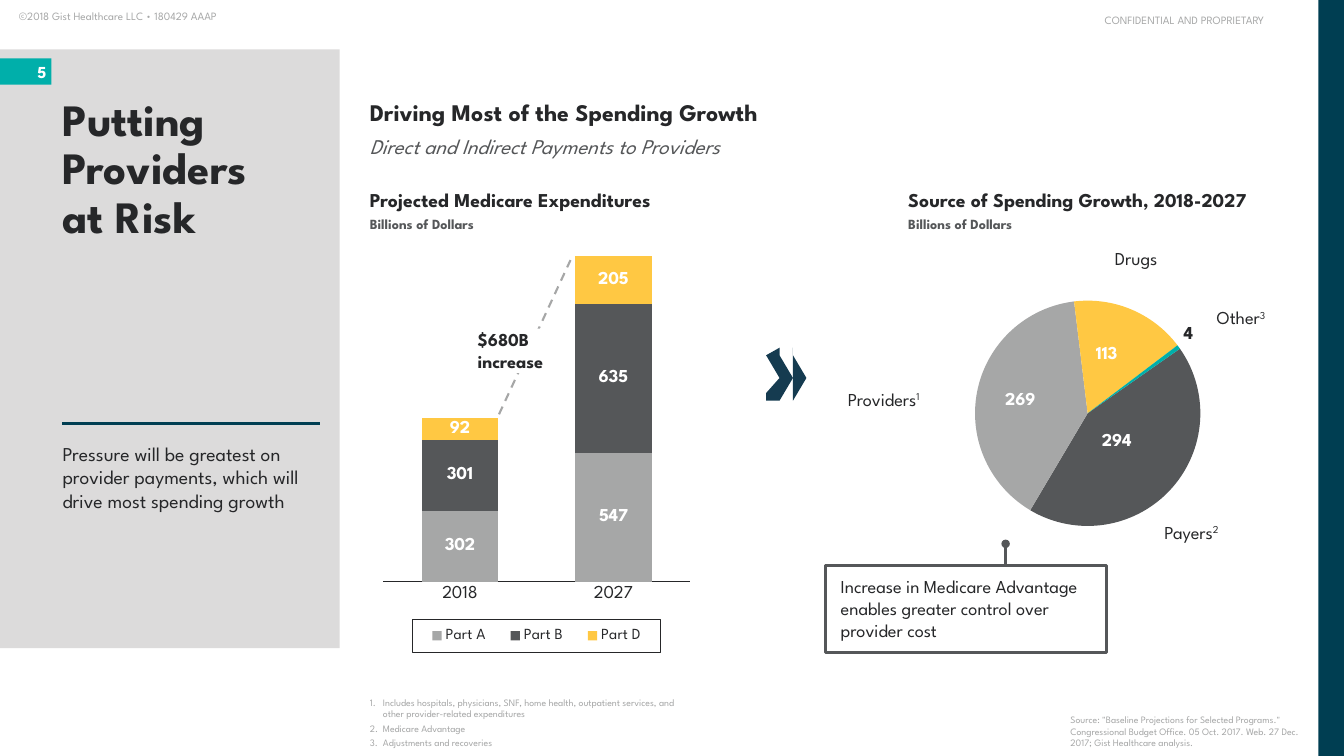
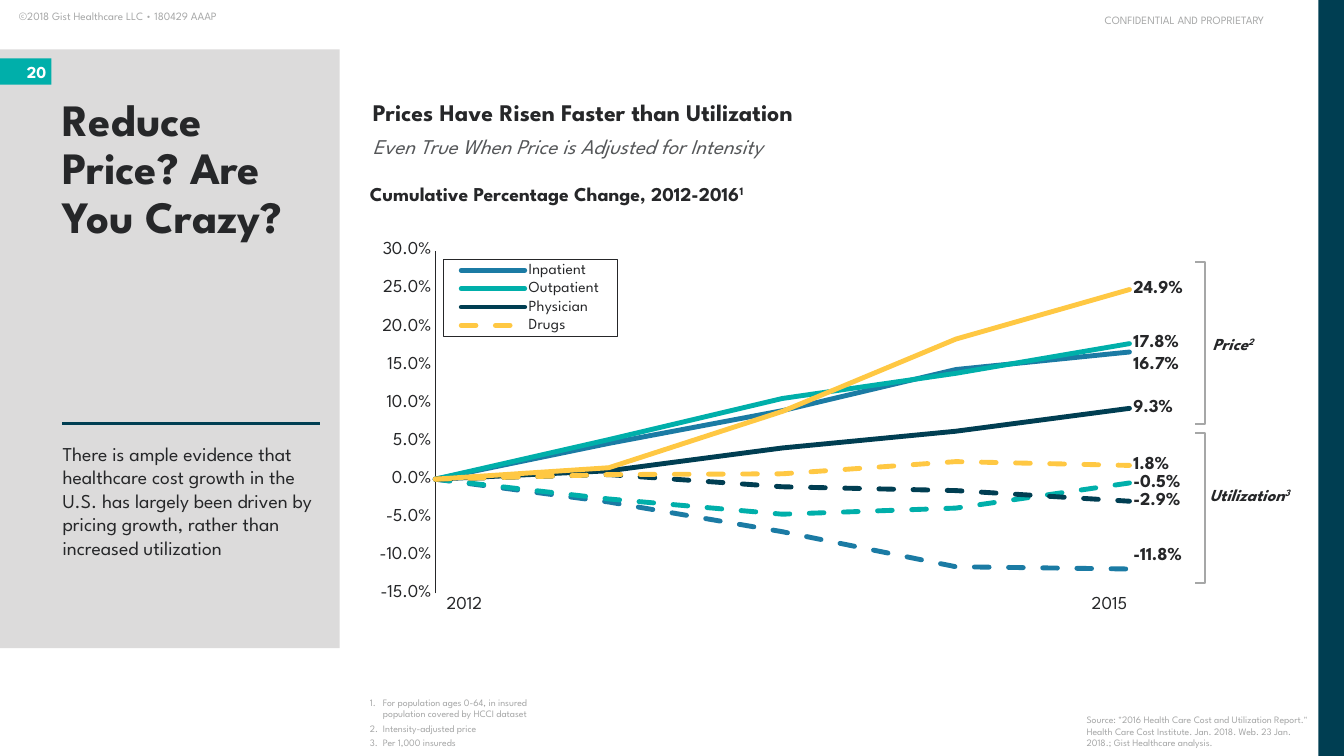
from pptx import Presentation, util as u
from pptx.chart.data import CategoryChartData
from pptx.dml.color import RGBColor
from pptx.enum import chart as ch, dml, shapes, text
from pptx.oxml import parse_xml
from pptx.oxml.ns import nsdecls

# Shared look; places are percentages of the slide
FONT = "League Spartan"
INK, SLATE, SILVER, WHITE = "262729", "555759", "A6A7A7", "FFFFFF"
NAVY, TEAL, GOLD, BLUE = "003E52", "00AFAA", "FFC843", "1B7BA4"
PANEL, ARROW = "DCDBDB", "153B50"
WIDTH, HEIGHT = u.Inches(13.333), u.Inches(7.5)
STRIPE_LEFT, BODY_LEFT, TEXT_LEFT, TEXT_WIDTH = 98.1, 27.52, 4.65, 18.75

def hue(code):
    return RGBColor.from_string(code)

def area(*shares):
    """Turn x, y, x, y percentages into lengths."""
    return [u.Emu(round(side * share / 100)) for side, share in zip((WIDTH, HEIGHT) * 2, shares)]

def node(tag, attributes="", inner=""):
    return parse_xml(f'<{tag} {nsdecls("a", "c")} {attributes}>{inner}</{tag}>')

def drop(parent, query):
    for old in parent.xpath(query):
        parent.remove(old)

# Text
def style_font(font, size, color=INK, bold=False, italic=False):
    font.name, font.size, font.bold, font.italic = FONT, u.Pt(size), bold, italic
    font.color.rgb = hue(color)

def add_span(para, words, look, raised=False):
    span = para.add_run()
    span.text = words
    style_font(span.font, **look)
    if raised:
        span._r.get_or_add_rPr().set("baseline", "30000")

def set_bullet(para, numbered):
    props = para._p.get_or_add_pPr()
    indent = u.Inches(0.13) if numbered else 0
    props.set("marL", str(indent))
    props.set("indent", str(-indent))
    if numbered:
        props.append(node("a:buClr", inner=f'<a:srgbClr val="{SILVER}"/>'))
        props.append(node("a:buAutoNum", 'type="arabicPeriod"'))
    else:
        props.append(node("a:buNone"))

def write(box, lines, anchor="TOP", align="LEFT", insets=(0, 0, 0, 0),
          spacing=None, numbered=False, **look):
    """Fill a shape; ^ starts a raised mark and a line feed breaks the line."""
    frame = box.text_frame
    frame.word_wrap, frame.auto_size = True, text.MSO_AUTO_SIZE.NONE
    frame.vertical_anchor = getattr(text.MSO_ANCHOR, anchor)
    (frame.margin_left, frame.margin_top,
     frame.margin_right, frame.margin_bottom) = map(u.Inches, insets)
    for number, line in enumerate(lines):
        para = frame.add_paragraph() if number else frame.paragraphs[0]
        set_bullet(para, numbered)
        para.alignment = getattr(text.PP_ALIGN, align)
        para.space_before = u.Pt(2 if number else 0)
        if spacing:
            para.line_spacing = spacing
        words, _, mark = line.partition("^")
        for row, part in enumerate(words.split("\n")):
            if row:
                para.add_line_break()
            add_span(para, part, look)
        if mark:
            add_span(para, mark, look, raised=True)

def add_label(page, words, left, top, width=8, height=3, size=13, **style):
    write(page.shapes.add_textbox(*area(left, top, width, height)), [words], size=size, **style)

# Shapes
def paint(shape, fill=None, line=None, weight=1):
    shape.shadow.inherit = False
    if fill:
        shape.fill.solid()
        shape.fill.fore_color.rgb = hue(fill)
    else:
        shape.fill.background()
    if line:
        shape.line.color.rgb, shape.line.width = hue(line), u.Pt(weight)
    else:
        shape.line.fill.background()
    return shape

def add_block(page, place, kind="RECTANGLE", **colors):
    return paint(page.shapes.add_shape(getattr(shapes.MSO_SHAPE, kind), *area(*place)), **colors)

def add_rule(page, ends, color, weight, dashed=False):
    rule = page.shapes.add_connector(shapes.MSO_CONNECTOR.STRAIGHT, *area(*ends))
    rule.line.color.rgb, rule.line.width = hue(color), u.Pt(weight)
    if dashed:
        rule.line.dash_style = dml.MSO_LINE.DASH
    rule.element.spPr.append(node("a:effectLst"))

def add_chevron(page, left, top):
    height = 7.07
    upper = [(0.83, 0.4), (0.6, 0), (0.3, 0), (0.08, 0.4), (0.08, 1.07)]
    lower = [(x, height - y) for x, y in reversed(upper)]
    outline = [(1.58, height / 2), *upper, (0.75, height / 2), *lower]
    points = [(left + x, top + y) for x, y in outline]
    pen = page.shapes.build_freeform(*points[0], scale=(WIDTH / 100, HEIGHT / 100))
    pen.add_line_segments(points[1:], close=True)
    paint(pen.convert_to_shape(), fill=ARROW)

# Charts
def manual_layout(x, y, w=None, h=None, target=""):
    """Boxes are placed from the chart's edge; labels are moved by an offset."""
    values, modes = {"x": x, "y": y}, ""
    if w:
        values.update(w=w, h=h)
        modes = target and f'<c:layoutTarget val="{target}"/>'
        modes += '<c:xMode val="edge"/><c:yMode val="edge"/>'
    sizes = "".join(f'<c:{key} val="{value}"/>' for key, value in values.items())
    return node("c:layout", inner=f"<c:manualLayout>{modes}{sizes}</c:manualLayout>")

def add_graph(page, kind, place, plot, cats, series, fmt="General"):
    data = CategoryChartData(number_format=fmt)
    data.categories = cats
    for name, values in series:
        data.add_series(name, values)
    graph = page.shapes.add_chart(getattr(ch.XL_CHART_TYPE, kind), *area(*place), data).chart
    graph.has_title = graph.has_legend = False
    style_font(graph.font, 10)
    plot_area = graph.element.xpath("c:chart/c:plotArea")[0]
    drop(plot_area, "c:layout")
    plot_area.insert(0, manual_layout(*plot, target="inner"))
    return graph

def style_axis(axis):
    axis.major_tick_mark = axis.minor_tick_mark = ch.XL_TICK_MARK.NONE
    axis.has_major_gridlines = False
    style_font(axis.tick_labels.font, 13)
    axis.format.line.color.rgb, axis.format.line.width = hue(INK), u.Pt(0.75)

def add_legend(graph, place, hidden=()):
    graph.has_legend = True
    graph.legend.position = ch.XL_LEGEND_POSITION.BOTTOM
    graph.legend.include_in_layout = False
    style_font(graph.legend.font, 11)
    legend = graph.element.xpath("c:chart/c:legend")[0]
    drop(legend, "c:layout")
    overlay = legend.xpath("c:overlay")[0]
    for index in hidden:
        overlay.addprevious(node("c:legendEntry",
                                 inner=f'<c:idx val="{index}"/><c:delete val="1"/>'))
    overlay.addprevious(manual_layout(*place))
    ink = f'<a:solidFill><a:srgbClr val="{INK}"/></a:solidFill>'
    overlay.addnext(node("c:spPr", inner=f'<a:ln w="9525">{ink}</a:ln>'))

def label_point(series, index, position, color, shift=None):
    label = series.points[index].data_label
    style_font(label.font, 13, color, bold=True)
    label.position = getattr(ch.XL_LABEL_POSITION, position)
    if shift:
        key = series._element.xpath(f'c:dLbls/c:dLbl/c:idx[@val="{index}"]')[0]
        key.addnext(manual_layout(*shift))

def add_spending_columns(page):
    parts = [("Part A", (302, 547)), ("Part B", (301, 635)), ("Part D", (92, 205))]
    graph = add_graph(page, "COLUMN_STACKED", (27.3, 26, 24.3, 62.13),
                      (0.05, 0.02, 0.94, 0.8), ["2018", "2027"], parts)
    graph.plots[0].gap_width = graph.plots[0].overlap = 100
    style_axis(graph.category_axis)
    scale = graph.value_axis
    scale.minimum_scale, scale.maximum_scale = 0, 1600
    scale.has_major_gridlines = scale.visible = False
    for series, color in zip(graph.plots[0].series, (SILVER, SLATE, GOLD)):
        series.format.fill.solid()
        series.format.fill.fore_color.rgb = hue(color)
        series.data_labels.show_value = True
        series.data_labels.position = ch.XL_LABEL_POSITION.CENTER
        style_font(series.data_labels.font, 13, WHITE, bold=True)
    add_legend(graph, (0.14, 0.9, 0.76, 0.07))

def add_growth_pie(page):
    graph = add_graph(page, "PIE", (68.85, 32, 22.8, 43.2), (0.16, 0.18, 0.74, 0.69),
                      ["1", "2", "3", "4"], [("Series 1", (294, 269, 113, 4))])
    graph.plots[0].vary_by_categories = False
    pie = graph.element.xpath("c:chart/c:plotArea/c:pieChart")[0]
    drop(pie, "c:firstSliceAng")
    pie.append(node("c:firstSliceAng", 'val="55"'))
    slices = [(SLATE, "CENTER", WHITE, (-0.04, -0.03)), (SILVER, "CENTER", WHITE, (-0.04, 0)),
              (GOLD, "CENTER", WHITE, (-0.01, -0.02)), (TEAL, "OUTSIDE_END", INK, None)]
    series = graph.plots[0].series[0]
    for index, (color, *label) in enumerate(slices):
        fill = series.points[index].format.fill
        fill.solid()
        fill.fore_color.rgb = hue(color)
        label_point(series, index, *label)

def add_change_lines(page):
    # Each solid price line is followed by its dashed utilization line
    lines = [("Inpatient", (0, 0.047, 0.09, 0.144, 0.167)),
             ("Series 2", (0, -0.03, -0.069, -0.115, -0.118)),
             ("Outpatient", (0, 0.052, 0.106, 0.139, 0.178)),
             ("Series 4", (0, -0.026, -0.046, -0.038, -0.005)),
             ("Physician", (0, 0.011, 0.041, 0.063, 0.093)),
             ("Series 6", (0, 0.006, -0.01, -0.015, -0.029)),
             ("Series 7", (0, 0.015, 0.089, 0.184, 0.249)),
             ("Drugs", (0, 0.006, 0.007, 0.023, 0.018))]
    graph = add_graph(page, "LINE", (26.85, 31.47, 61.5, 56.67), (0.09, 0.03, 0.84, 0.8),
                      ["1", "2", "3", "4", "5"], lines, fmt="0.0%")
    graph.category_axis.visible = False
    scale = graph.value_axis
    style_axis(scale)
    scale.minimum_scale, scale.maximum_scale, scale.major_unit = -0.15, 0.3, 0.05
    axis = graph.element.xpath("c:chart/c:plotArea/c:valAx")[0]
    drop(axis, "c:crossBetween")
    axis.xpath("c:crossAx | c:crosses")[-1].addnext(node("c:crossBetween", 'val="midCat"'))
    shifts = {0: (0, 0.03), 1: (0, -0.03)}
    for index, series in enumerate(graph.plots[0].series):
        series.smooth = False
        series.marker.style = ch.XL_MARKER_STYLE.NONE
        stroke = series.format.line
        stroke.color.rgb, stroke.width = hue((BLUE, TEAL, NAVY, GOLD)[index // 2]), u.Pt(3.5)
        if index % 2:
            stroke.dash_style = dml.MSO_LINE.DASH
        series._element.xpath("c:spPr/a:ln")[0].set("cap", "rnd")
        series.data_labels.show_value = False
        label_point(series, 4, "RIGHT", INK, shifts.get(index))
    for labels in (scale.tick_labels, *(series.data_labels for series in graph.plots[0].series)):
        labels.number_format, labels.number_format_is_linked = "0.0%", False
    add_legend(graph, (0.1, 0.05, 0.21, 0.18), hidden=(1, 3, 5, 6))

# Frame shared through the layout
def build_frame(page, layout):
    for holder in list(layout.placeholders):
        if holder.placeholder_format.idx >= 10:
            layout.shapes.element.remove(holder.element)
    first = len(page.shapes)
    add_label(page, "©2018 Gist Healthcare LLC • 180429 AAAP", 1.4, 1.2, 25, size=8, color=SILVER)
    add_label(page, "CONFIDENTIAL AND PROPRIETARY", 82.2, 1.7, 15, size=8, color=SILVER)
    for place, color in (((0, 6.53, 25.28, 79.2), PANEL), ((0, 7.73, 3.83, 3.47), TEAL),
                         ((STRIPE_LEFT, 0, 100 - STRIPE_LEFT, 100), NAVY)):
        add_block(page, place, fill=color)
    add_rule(page, (TEXT_LEFT, 56, 23.78, 56), NAVY, 1.75)
    for shape in list(page.shapes)[first:]:
        layout.shapes.element.append(shape.element)

def fill_page(page, number, title, takeaway, notes, notes_width, source, source_width):
    heading, body, footnotes = page.placeholders
    for holder, place in ((heading, (TEXT_LEFT, 12.93, TEXT_WIDTH, 30)),
                          (body, (TEXT_LEFT, 58.4, TEXT_WIDTH, 20)),
                          (footnotes, (BODY_LEFT, 90, notes_width, 10))):
        holder.left, holder.top, holder.width, holder.height = area(*place)
    write(heading, [title], size=32, bold=True, spacing=0.9)
    write(body, [takeaway], size=14)
    small = {"size": 7, "color": SILVER, "anchor": "BOTTOM"}
    write(footnotes, notes, insets=(0, 0, 0, 0.07), numbered=True, **small)
    add_label(page, source, STRIPE_LEFT - source_width, 90, source_width, 10,
              insets=(0, 0, 0.08, 0.07), **small)
    add_label(page, number, 0.9, 8.13, 2.55, size=12, color=WHITE, bold=True, align="RIGHT")

def add_headline(page, left, headline, subtitle):
    add_label(page, headline, left, 12.93, 40, 4, size=17, bold=True)
    add_label(page, subtitle, left, 17.6, 40, 4, size=15, color=SLATE, italic=True)

def build_spending(page):
    fill_page(page, "5", "Putting Providers\nat Risk",
              "Pressure will be greatest on provider payments, which will drive most spending growth",
              ["Includes hospitals, physicians, SNF, home health, outpatient services, and other "
               "provider-related expenditures", "Medicare Advantage", "Adjustments and recoveries"],
              22.8, 'Source: "Baseline Projections for Selected Programs." Congressional Budget '
              "Office. 05 Oct. 2017. Web. 27 Dec. 2017; Gist Healthcare analysis.", 18.45)
    add_headline(page, BODY_LEFT, "Driving Most of the Spending Growth",
                 "Direct and Indirect Payments to Providers")
    for left, heading in ((BODY_LEFT, "Projected Medicare Expenditures"),
                          (67.58, "Source of Spending Growth, 2018-2027")):
        add_label(page, heading, left, 24.8, 30, size=14, bold=True)
        add_label(page, "Billions of Dollars", left, 28.53, 30, size=10, color=SLATE, bold=True)
    add_spending_columns(page)
    add_rule(page, (37.13, 54.8, 42.45, 34.4), SILVER, 1.5, dashed=True)
    increase = add_block(page, (35.55, 43.47, 6.23, 5.87), fill=WHITE)
    write(increase, ["$680B increase"], size=13, bold=True)
    for left in (57.3, 58.65):
        add_chevron(page, left, 46.4)
    add_growth_pie(page)
    for words, left, top in (("Providers^1", 63.08, 51.33), ("Payers^2", 86.63, 68.93),
                             ("Drugs", 82.95, 32.67), ("Other^3", 90.53, 40.53)):
        add_label(page, words, left, top, 7)
    # Callout with a round end on its pointer
    callout = add_block(page, (61.43, 74.8, 20.93, 11.47), "LINE_CALLOUT_1", line=SLATE, weight=2)
    for index, share in enumerate((0, 0.64, -0.25, 0.64)):
        callout.adjustments[index] = share
    callout.element.spPr.xpath("a:ln")[0].append(node("a:tailEnd", 'type="oval"'))
    write(callout, ["Increase in Medicare Advantage enables greater control over provider cost"],
          size=13, insets=(0.15, 0.1, 0.15, 0.1))

def build_prices(page):
    fill_page(page, "20", "Reduce Price? Are You Crazy?",
              "There is ample evidence that healthcare cost growth in the U.S. has largely been "
              "driven by pricing growth, rather than increased utilization",
              ["For population ages 0-64, in insured population covered by HCCI dataset",
               "Intensity-adjusted price", "Per 1,000 insureds"],
              14.55, 'Source: "2016 Health Care Cost and Utilization Report." Health Care Cost '
              "Institute. Jan. 2018. Web. 23 Jan. 2018.; Gist Healthcare analysis.", 17.25)
    add_headline(page, 27.75, "Prices Have Risen Faster than Utilization",
                 "Even True When Price is Adjusted for Intensity")
    add_label(page, "Cumulative Percentage Change, 2012-2016^1", BODY_LEFT, 24, 34, size=14, bold=True)
    add_change_lines(page)
    for year, left in (("2012", 33.23), ("2015", 81.23)):
        add_label(page, year, left, 78.27, 5)
    for words, left, middle, top, height in (("Price^2", 90.23, 44.13, 34.67, 21.47),
                                             ("Utilization^3", 90, 64.13, 57.33, 19.73)):
        place = (88.95, top, 0.68, height)
        add_block(page, place, "RIGHT_BRACKET", line=SILVER, weight=1.5).adjustments[0] = 0
        add_label(page, words, left, middle, size=12, bold=True, italic=True)

def main():
    deck = Presentation()
    deck.slide_width, deck.slide_height = WIDTH, HEIGHT
    layout = deck.slide_layouts.get_by_name("Two Content")
    spending, prices = (deck.slides.add_slide(layout) for _ in range(2))
    build_frame(spending, layout)
    build_spending(spending)
    build_prices(prices)
    deck.save("out.pptx")

if __name__ == "__main__":
    main()
